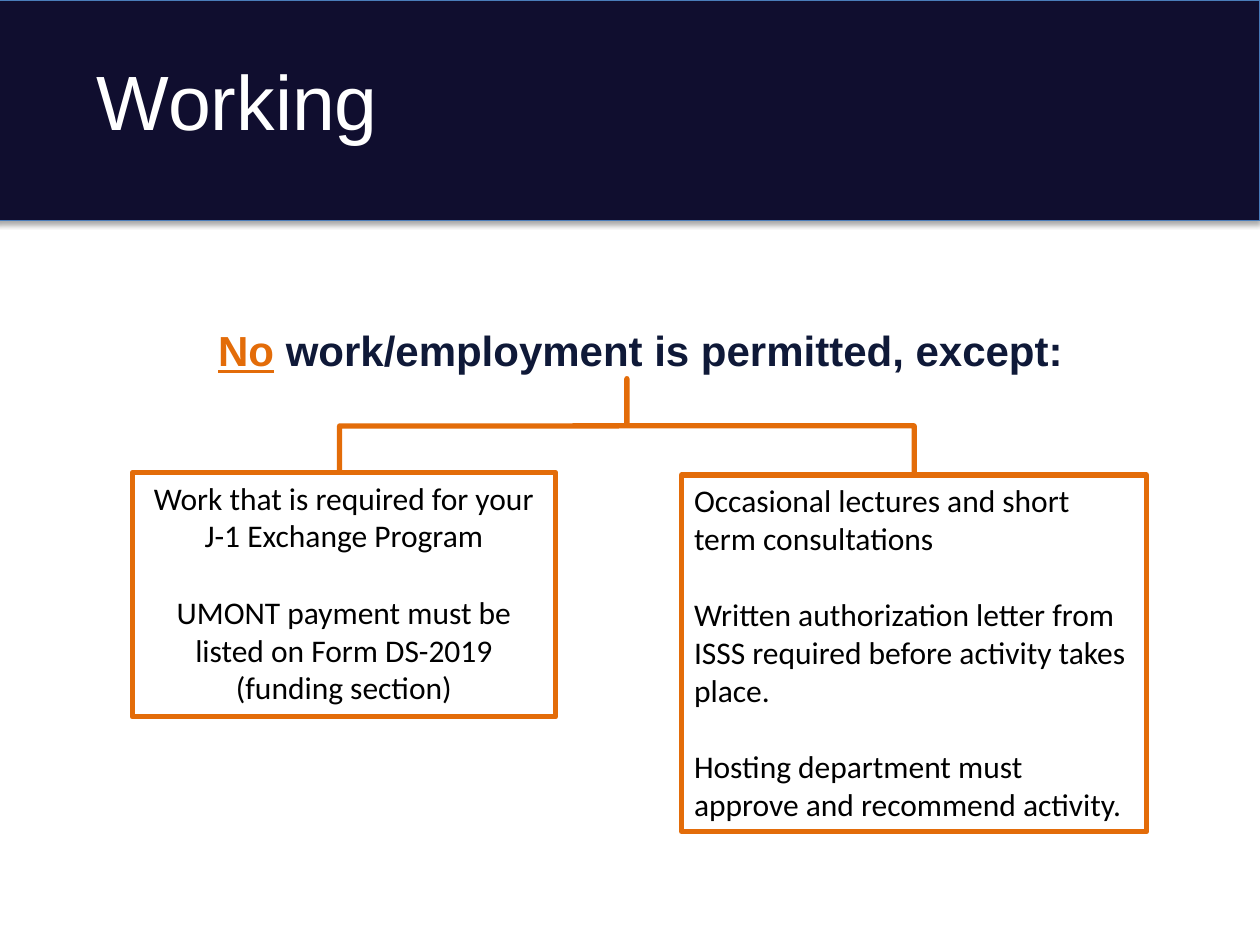
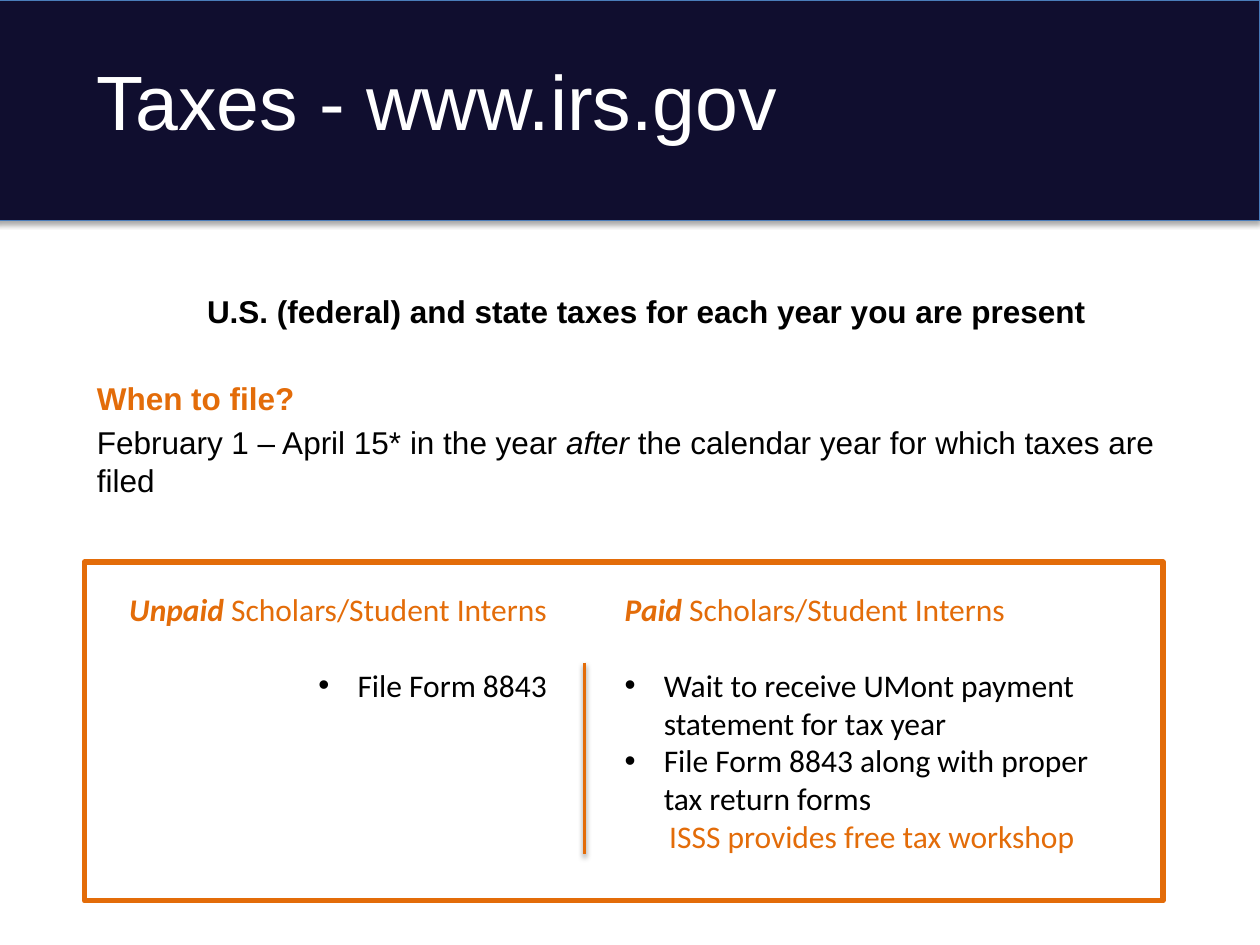
from dataclasses import dataclass
from lxml.etree import SubElement
from pptx import Presentation
from pptx.dml.color import RGBColor
from pptx.enum.shapes import MSO_CONNECTOR as Link, MSO_SHAPE as Shape
from pptx.enum.text import MSO_ANCHOR as Anchor, PP_ALIGN as Align
from pptx.oxml.ns import qn
from pptx.util import Inches, Pt


@dataclass(frozen=True)
class Theme:
    band: str = "100E2F"
    band_edge: str = "4A7DBA"
    title: str = "FFFFFF"
    heading: str = "0F1938"
    accent: str = "E36C09"
    text: str = "000000"
    head_font: str = "Arial"
    body_font: str = "Calibri"
    title_size: int = 44
    heading_size: int = 24
    text_size: int = 18
    frame_width: float = 3
    divider_width: float = 2


THEME = Theme()
BLANK_LINE = 22  # points left between paragraph groups
BULLET_INDENT = 0.31


@dataclass
class Para:
    """Runs are (text, colour, flags); flags hold any of b, i and u."""
    runs: list
    align: Align = Align.LEFT
    gap: float = 0
    bullet: bool = False


def plain(text, align=Align.LEFT, gap=0, bullet=False, color=THEME.text, flags=""):
    return Para([(text, color, flags)], align, gap, bullet)


def audience(kind, align):
    return Para([(kind, THEME.accent, "bi"),
                 (" Scholars/Student Interns", THEME.accent, "")], align)


# Content: places are (left, top, width, height) in inches
BAND = (-0.04, 0, 10.04, 1.75)
TITLE = (0.67, 0.25, 8.92, 1.08)

WORK_RULE = (0.67, 2.53, 8.92, 0.55), [
    Para([("No", THEME.accent, "bu"), (" ", THEME.accent, "b"),
          ("work/employment is permitted, except: ", THEME.heading, "b")], Align.CENTER)]
EXCEPTIONS = [
    ((1.05, 3.75, 3.36, 1.94), [
        plain("Work that is required for your J-1 Exchange Program", Align.CENTER),
        plain("UMONT payment must be listed on Form DS-2019 (funding section)",
              Align.CENTER, BLANK_LINE)]),
    ((5.41, 3.77, 3.69, 2.83), [
        plain("Occasional lectures and short term consultations"),
        plain("Written authorization letter from ISSS required before activity takes place.",
              gap=BLANK_LINE),
        plain("Hosting department must approve and recommend activity.", gap=BLANK_LINE)]),
]
BRACE = (4.6, 1.1, 0.75, 4.56)

FILING = (0.67, 2.27, 8.92, 2.1), [
    plain("U.S. (federal) and state taxes for each year you are present",
          Align.CENTER, flags="b"),
    plain("When to file?", gap=28, color=THEME.accent, flags="b"),
    Para([("February 1 – April 15* in the year ", THEME.text, ""),
          ("after ", THEME.text, "i"),
          ("the calendar year for which taxes are filed", THEME.text, "")], gap=3.6)]
SCHOLARS = [
    ((4.86, 4.63, 4.12, 2.52), [
        audience("Paid", Align.LEFT),
        plain("Wait to receive UMont payment statement for tax year",
              gap=BLANK_LINE, bullet=True),
        plain("File Form 8843 along with proper tax return forms", bullet=True),
        plain("ISSS provides free tax workshop", Align.CENTER, color=THEME.accent)]),
    ((0.88, 4.63, 3.56, 1.62), [
        audience("Unpaid", Align.RIGHT),
        plain("File Form 8843", Align.RIGHT, BLANK_LINE, True)]),
]
DIVIDER_X, DIVIDER_TOP, DIVIDER_BOTTOM = 4.64, 5.26, 6.78
SCHOLAR_FRAME = (0.67, 4.46, 8.56, 2.69)


def rgb(color):
    return RGBColor.from_string(color)


def inches(place):
    return [Inches(length) for length in place]


def drop_shadow(shape, opacity, distance):
    effects = SubElement(shape._element.spPr, qn("a:effectLst"))
    shadow = SubElement(effects, qn("a:outerShdw"), blurRad=str(Pt(3.1)),
                        dist=str(Pt(distance)), dir="5400000", rotWithShape="0")
    color = SubElement(shadow, qn("a:srgbClr"), val="000000")
    SubElement(color, qn("a:alpha"), val=str(opacity * 1000))


def add_bullet(paragraph):
    props = paragraph._p.get_or_add_pPr()
    props.set("marL", str(Inches(BULLET_INDENT)))
    props.set("indent", str(-Inches(BULLET_INDENT)))
    color = SubElement(props, qn("a:buClr"))
    SubElement(color, qn("a:srgbClr"), val=THEME.text)
    SubElement(props, qn("a:buFont"), typeface="Arial")
    SubElement(props, qn("a:buChar"), char="•")


def style(font, color, flags):
    font.color.rgb = rgb(color)
    font.bold, font.italic, font.underline = (flag in flags for flag in "biu")


def write(shape, paras, font_name, size, anchor=Anchor.TOP):
    frame = shape.text_frame
    frame.word_wrap = True
    frame.vertical_anchor = anchor
    for index, para in enumerate(paras):
        paragraph = frame.add_paragraph() if index else frame.paragraphs[0]
        paragraph.alignment = para.align
        paragraph.space_before = Pt(para.gap)
        if para.bullet:
            add_bullet(paragraph)
        paragraph.font.name, paragraph.font.size = font_name, Pt(size)
        for text, color, flags in para.runs:
            run = paragraph.add_run()
            run.text = text
            style(paragraph.font if len(para.runs) == 1 else run.font, color, flags)


def add_text(slide, place, paras, font_name, size, anchor=Anchor.TOP):
    write(slide.shapes.add_textbox(*inches(place)), paras, font_name, size, anchor)


def add_outline(slide, place, kind=Shape.RECTANGLE):
    outline = slide.shapes.add_shape(kind, *inches(place))
    outline.shadow.inherit = False
    outline.fill.background()
    outline.line.color.rgb = rgb(THEME.accent)
    outline.line.width = Pt(THEME.frame_width)
    return outline


def add_titled_slide(deck, title):
    slide = deck.slides.add_slide(deck.slide_layouts[6])
    band = slide.shapes.add_shape(Shape.RECTANGLE, *inches(BAND))
    band.fill.solid()
    band.fill.fore_color.rgb = rgb(THEME.band)
    band.line.color.rgb = rgb(THEME.band_edge)
    band.line.width = Pt(0.75)
    drop_shadow(band, 35, 1.8)
    add_text(slide, TITLE, [plain(title, color=THEME.title)],
             THEME.head_font, THEME.title_size, Anchor.MIDDLE)
    return slide


def build_working(deck):
    slide = add_titled_slide(deck, "Working")
    add_text(slide, *WORK_RULE, THEME.head_font, THEME.heading_size)
    for place, paras in EXCEPTIONS:
        write(add_outline(slide, place), paras, THEME.body_font, THEME.text_size)
    brace = add_outline(slide, BRACE, Shape.LEFT_BRACE)
    brace.adjustments[0], brace.adjustments[1] = 0, 0.5
    brace.rotation = 90


def build_taxes(deck):
    slide = add_titled_slide(deck, "Taxes - www.irs.gov")
    add_text(slide, *FILING, THEME.head_font, THEME.text_size)
    for place, paras in SCHOLARS:
        add_text(slide, place, paras, THEME.body_font, THEME.text_size)
    divider = slide.shapes.add_connector(
        Link.STRAIGHT, *inches((DIVIDER_X, DIVIDER_TOP, DIVIDER_X, DIVIDER_BOTTOM)))
    divider.line.color.rgb = rgb(THEME.accent)
    divider.line.width = Pt(THEME.divider_width)
    drop_shadow(divider, 38, 1.6)
    add_outline(slide, SCHOLAR_FRAME)


def main():
    deck = Presentation()
    deck.slide_width, deck.slide_height = Inches(10), Inches(7.5)
    build_working(deck)
    build_taxes(deck)
    deck.save("out.pptx")


if __name__ == "__main__":
    main()
